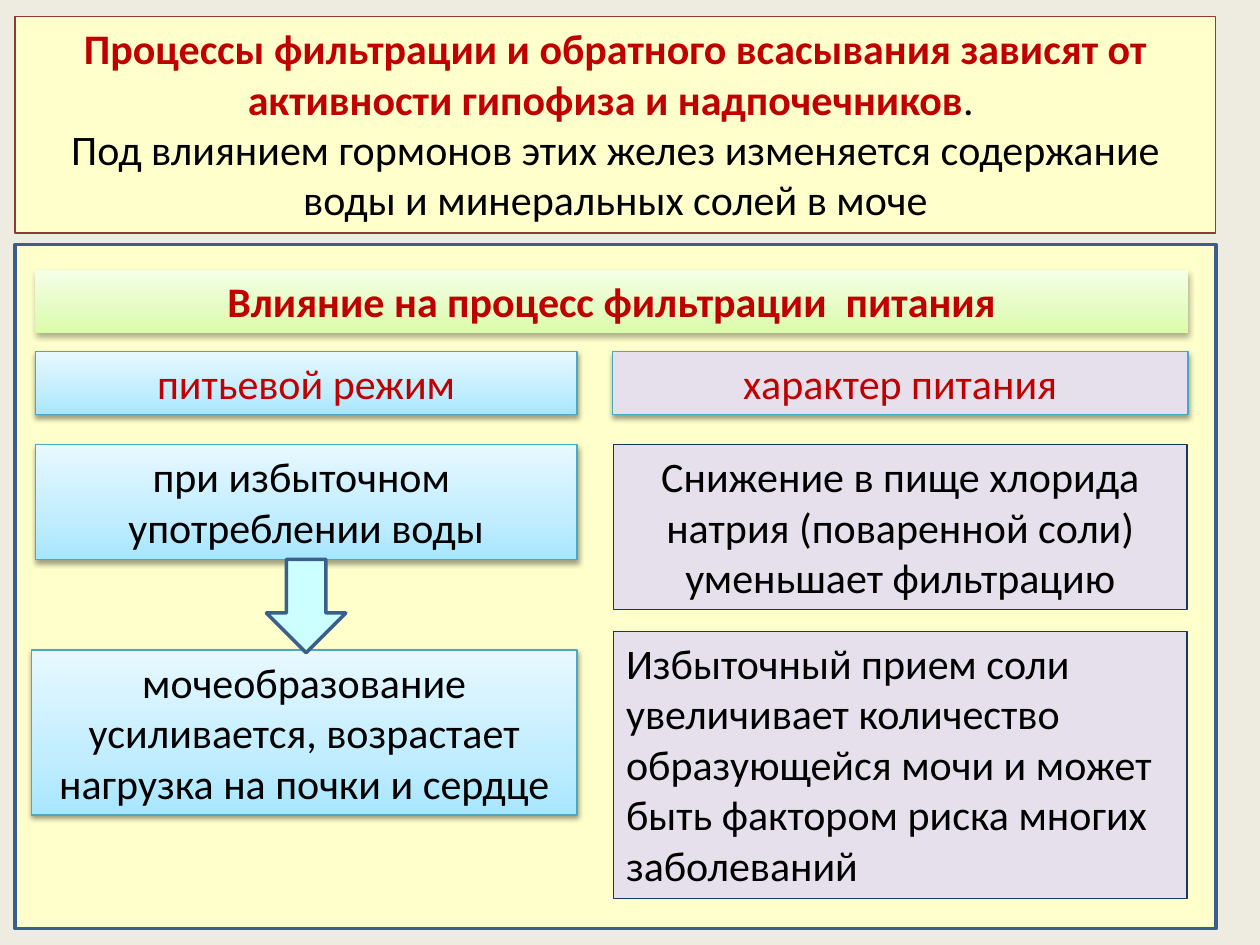
import pptx
import pptx.dml.color
import pptx.enum.shapes
import pptx.enum.text
import pptx.oxml
import pptx.oxml.ns
import pptx.util
from pptx.util import Inches

RGBColor = pptx.dml.color.RGBColor
SHAPE = pptx.enum.shapes.MSO_SHAPE
ALIGN = pptx.enum.text.PP_ALIGN
ANCHOR = pptx.enum.text.MSO_ANCHOR

BACKGROUND = RGBColor(0xEE, 0xEC, 0xE1)
CREAM = RGBColor(0xFF, 0xFF, 0xCC)
LILAC = RGBColor(0xE6, 0xE0, 0xEC)
AQUA = RGBColor(0xCC, 0xFF, 0xFF)
RED = RGBColor(0xC0, 0x00, 0x00)
BLACK = RGBColor(0x00, 0x00, 0x00)
STEEL = RGBColor(0x3A, 0x5F, 0x8C)
MAROON = RGBColor(0x95, 0x37, 0x35)
TEAL = RGBColor(0x46, 0xAA, 0xC5)
NAVY = RGBColor(0x17, 0x37, 0x5E)
# Gradients run from the bottom edge to the top
GREEN_GRADIENT = (RGBColor(0xDA, 0xFD, 0xA7), RGBColor(0xE4, 0xFC, 0xC2),
                  RGBColor(0xF5, 0xFF, 0xE7))
BLUE_GRADIENT = (RGBColor(0xA7, 0xE6, 0xFF), RGBColor(0xC1, 0xED, 0xFF),
                 RGBColor(0xE7, 0xF8, 0xFF))
GRADIENT_POSITIONS = (0, 35, 100)

# Shadows: opacity in percent, blur and distance in points
BANNER_SHADOW = (32, 3.5, 2.2)
BOX_SHADOW = (38, 3.1, 1.6)


def parse_drawing(tag, attributes, content):
    namespace = pptx.oxml.ns.nsdecls("a")
    return pptx.oxml.parse_xml(
        f"<a:{tag} {namespace} {attributes}>{content}</a:{tag}>")


def fill_gradient(shape, colors):
    shape.fill.gradient()
    shape.fill.gradient_angle = 90
    stops = "".join(
        f'<a:gs pos="{position * 1000}"><a:srgbClr val="{color}"/></a:gs>'
        for position, color in zip(GRADIENT_POSITIONS, colors))
    gradient = shape._element.spPr.find(pptx.oxml.ns.qn("a:gradFill"))
    gradient.replace(gradient.find(pptx.oxml.ns.qn("a:gsLst")),
                     parse_drawing("gsLst", "", stops))


def add_shadow(shape, opacity, blur, distance):
    effects = shape._element.spPr.find(pptx.oxml.ns.qn("a:effectLst"))
    effects.append(parse_drawing(
        "outerShdw",
        f'blurRad="{pptx.util.Pt(blur)}" dist="{pptx.util.Pt(distance)}" '
        'dir="5400000" rotWithShape="0"',
        f'<a:srgbClr val="{BLACK}"><a:alpha val="{opacity * 1000}"/></a:srgbClr>'))


def style_shape(shape, fill, line=None, width=0.75, shadow=None):
    if isinstance(fill, RGBColor):
        shape.fill.solid()
        shape.fill.fore_color.rgb = fill
    else:
        fill_gradient(shape, fill)
    if line is None:
        shape.line.fill.background()
    else:
        shape.line.color.rgb = line
        shape.line.width = pptx.util.Pt(width)
    if shadow:
        add_shadow(shape, *shadow)


def add_box(slide, box, fill, kind=SHAPE.RECTANGLE, **style):
    shape = slide.shapes.add_shape(kind, *map(Inches, box))
    shape.shadow.inherit = False
    style_shape(shape, fill, **style)
    return shape


def add_run(paragraph, text, color=BLACK, bold=False, size=24):
    run = paragraph.add_run()
    run.text = text
    run.font.name = "Calibri"
    run.font.size = pptx.util.Pt(size)
    run.font.bold = bold
    run.font.color.rgb = color


def write_text(shape, *lines, align=ALIGN.CENTER, anchor=ANCHOR.TOP, **font):
    """Each line is a string or a list of (text, font keywords) pairs."""
    frame = shape.text_frame
    frame.word_wrap = True
    frame.auto_size = pptx.enum.text.MSO_AUTO_SIZE.NONE
    frame.vertical_anchor = anchor
    for index, line in enumerate(lines):
        paragraph = frame.add_paragraph() if index else frame.paragraphs[0]
        paragraph.alignment = align
        for text, keywords in [(line, font)] if isinstance(line, str) else line:
            add_run(paragraph, text, **keywords)


def place_title(slide, box):
    title = slide.shapes.title
    title.left, title.top, title.width, title.height = map(Inches, box)
    style_shape(title, CREAM, line=MAROON)
    write_text(
        title,
        [("Процессы фильтрации и обратного всасывания зависят от активности "
          "гипофиза и надпочечников", {"color": RED, "bold": True}), (". ", {})],
        "Под влиянием гормонов этих желез изменяется содержание воды и "
        "минеральных солей в моче")


def add_panel(slide, box):
    left, top, width, height = box
    add_box(slide, box, CREAM, line=STEEL, width=2)
    banner = add_box(slide, (left + 0.16, top + 0.2, width - 0.38, 0.5),
                     GREEN_GRADIENT, shadow=BANNER_SHADOW)
    write_text(banner, "Влияние на процесс фильтрации  питания",
               color=RED, bold=True)


def add_drinking_column(slide, box):
    left, top, width, height = box
    blue = {"fill": BLUE_GRADIENT, "line": TEAL, "shadow": BOX_SHADOW}
    heading = add_box(slide, (left, top, width, 0.5), **blue)
    write_text(heading, "питьевой режим", color=RED)
    cause = add_box(slide, (left, top + 0.74, width, 0.91), **blue)
    write_text(cause, "при избыточном ", "употреблении воды")
    effect = add_box(slide, (left - 0.03, top + 2.37, width + 0.03, 1.31), **blue)
    write_text(effect, "мочеобразование усиливается, возрастает нагрузка "
                       "на почки и сердце")
    # Arrow from cause to effect
    arrow_width = 0.63
    add_box(slide, (left + (width - arrow_width) / 2, top + 1.65, arrow_width, 0.74),
            AQUA, kind=SHAPE.DOWN_ARROW, line=STEEL, width=2)


def add_diet_column(slide, box):
    left, top, width, height = box
    heading = add_box(slide, (left, top, width, 0.5), LILAC,
                      line=TEAL, shadow=BOX_SHADOW)
    write_text(heading, "характер питания", color=RED)
    less_salt = add_box(slide, (left + 0.01, top + 0.74, width - 0.02, 1.31),
                        LILAC, line=NAVY)
    write_text(less_salt, "Снижение в пище хлорида натрия (поваренной соли) "
                          "уменьшает фильтрацию")
    more_salt = add_box(slide, (left + 0.01, top + 2.22, width - 0.02, 2.12),
                        LILAC, line=NAVY)
    write_text(more_salt, "Избыточный прием соли увеличивает количество "
                          "образующейся мочи и может быть фактором риска "
                          "многих заболеваний", align=ALIGN.LEFT)


def main():
    presentation = pptx.Presentation()
    presentation.slide_width = Inches(10)
    presentation.slide_height = Inches(7.5)
    slide = presentation.slides.add_slide(presentation.slide_layouts[5])
    slide.background.fill.solid()
    slide.background.fill.fore_color.rgb = BACKGROUND

    place_title(slide, (0.12, 0.13, 9.53, 1.72))
    add_panel(slide, (0.12, 1.94, 9.53, 5.43))
    add_diet_column(slide, (4.86, 2.79, 4.57, 4.34))
    add_drinking_column(slide, (0.28, 2.79, 4.3, 3.68))

    presentation.save("out.pptx")


if __name__ == "__main__":
    main()
